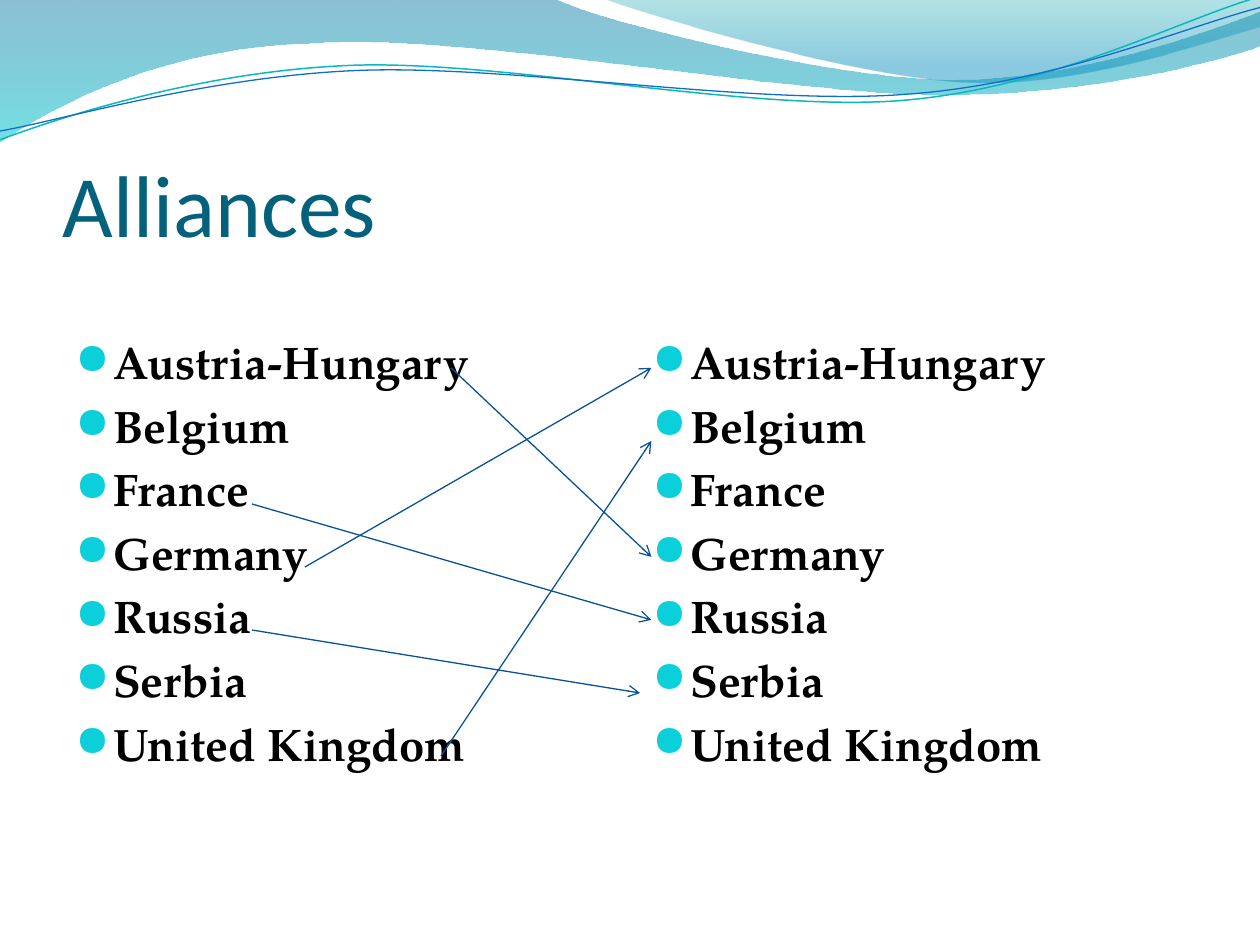
from lxml import etree
from pptx import Presentation
from pptx.dml.color import RGBColor
from pptx.enum import shapes, text
from pptx.oxml import ns
from pptx.util import Inches, Pt

COLORS = {
    "title": "04617B", "body": "000000", "bullet": "0BD0D9", "arrow": "095295",
    "teal_line": "0AB8BF", "blue_line": "0F6FC6",
    "deep_blue": "0074A1", "aqua": "00C6CF", "green": "00A1A9", "sky": "008BBF",
}
COUNTRIES = ["Austria-Hungary", "Belgium", "France", "Germany", "Russia",
             "Serbia", "United Kingdom"]
ARROWS = [
    ((2.42, 4.5), (5.17, 2.92)),
    ((2, 5), (5.08, 5.5)),
    ((3.5, 6), (5.17, 3.5)),
    ((2, 4), (5.17, 4.92)),
    ((3.58, 2.92), (5.17, 4.42)),
]
# Waves: two numbers are a straight step, six numbers are a Bezier curve.
WIDE_WAVE = [
    (0, 0), (4.4, -0.01), (4.76, 0.17, 6.64, 0.63, 7.58, 0.63),
    (8.53, 0.63, 9.58, 0.26, 10, 0.09), (10.01, 0.36),
    (9.83, 0.44, 8.7, 0.76, 7.46, 0.75), (6.22, 0.75, 3.82, 0.28, 2.57, 0.34),
    (1.29, 0.36, 0.46, 0.83, -0.01, 1.13), (0, 0),
]
RIGHT_WAVE = [
    (4.79, -0.01), (5.09, 0.11, 6.82, 0.62, 7.69, 0.65),
    (8.56, 0.69, 9.61, 0.32, 10, 0.21), (10, 0), (4.79, -0.01),
]
TEAL_CURVE = [
    (0, 1.11), (0.48, 0.93, 1.58, 0.57, 2.77, 0.52),
    (3.95, 0.47, 5.93, 0.89, 7.13, 0.8), (8.33, 0.71, 9.38, 0.15, 9.98, -0.02),
]
BLUE_CURVE = [
    (0, 1.04), (0.47, 0.96, 1.64, 0.61, 2.83, 0.56),
    (4.03, 0.51, 5.97, 0.84, 7.17, 0.75), (8.36, 0.67, 9.41, 0.21, 10, 0.06),
]


def rgb(name):
    return RGBColor.from_string(COLORS[name])


def add_xml(parent, tag, **attrs):
    return etree.SubElement(parent, ns.qn(tag), attrs)


def add_outline(s, steps, close):
    """Add a freeform through the step ends, then bend its curved steps."""
    ends = [(Inches(step[-2]), Inches(step[-1])) for step in steps]
    builder = s.shapes.build_freeform(*ends[0])
    builder.add_line_segments(ends[1:], close=close)
    sp = builder.convert_to_shape()
    sp.shadow.inherit = False
    segments = list(sp._element.iter(ns.qn("a:lnTo")))
    for segment, step in zip(segments, steps[1:]):
        if len(step) == 6:
            curve = etree.Element(ns.qn("a:cubicBezTo"))
            for x, y in zip(step[::2], step[1::2]):
                add_xml(curve, "a:pt", x=str(Inches(x) - sp.left),
                        y=str(Inches(y) - sp.top))
            segment.getparent().replace(segment, curve)
    return sp


def add_wave(s, steps, stops):
    """Add a filled wave; stops are (position, colour name, opacity in percent)."""
    sp = add_outline(s, steps, close=True)
    sp.line.fill.background()
    sp.fill.gradient()
    sp.fill.gradient_angle = 270
    for stop, (position, name, _) in zip(sp.fill.gradient_stops, stops):
        stop.position = position
        stop.color.rgb = rgb(name)
    colors = sp._element.spPr.iter(ns.qn("a:srgbClr"))
    for color, (_, _, opacity) in zip(list(colors), stops):
        add_xml(color, "a:alpha", val=str(opacity * 1000))


def add_curve(s, steps, color, width):
    sp = add_outline(s, steps, close=False)
    sp.fill.background()
    sp.line.color.rgb = rgb(color)
    sp.line.width = Pt(width)


def add_bullet(p):
    pPr = p._p.get_or_add_pPr()
    pPr.set("marL", str(Inches(0.3)))
    pPr.set("indent", str(-Inches(0.3)))
    add_xml(add_xml(pPr, "a:buClr"), "a:srgbClr", val=COLORS["bullet"])
    add_xml(pPr, "a:buSzPct", val="95000")
    add_xml(pPr, "a:buFont", typeface="OpenSymbol")
    add_xml(pPr, "a:buChar", char="●")


def add_text(s, lines, box, size, font, color, bold=False, bullets=False, before=0,
             anchor=text.MSO_ANCHOR.TOP, insets=(0.1, 0.05, 0.1, 0.05)):
    tf = s.shapes.add_textbox(*map(Inches, box)).text_frame
    tf.word_wrap = True
    tf.vertical_anchor = anchor
    tf.margin_left, tf.margin_top, tf.margin_right, tf.margin_bottom = map(Inches, insets)
    for i, line in enumerate(lines):
        p = tf.add_paragraph() if i else tf.paragraphs[0]
        p.space_before = Pt(before)
        if bullets:
            add_bullet(p)
        r = p.add_run()
        r.text = line
        r.font.size, r.font.name, r.font.bold = Pt(size), font, bold
        r.font.color.rgb = rgb(color)


def add_arrow(s, start, end):
    line = s.shapes.add_connector(shapes.MSO_CONNECTOR.STRAIGHT,
                                  *map(Inches, start + end))
    line.line.color.rgb = rgb("arrow")
    line.line.width = Pt(0.75)
    add_xml(line.line._get_or_add_ln(), "a:tailEnd", type="arrow")
    add_xml(line._element.spPr, "a:effectLst")


def main():
    prs = Presentation()
    prs.slide_width, prs.slide_height = Inches(10), Inches(7.5)
    s = prs.slides.add_slide(prs.slide_layouts[6])

    add_wave(s, WIDE_WAVE, [(0, "deep_blue", 45), (1, "aqua", 55)])
    add_wave(s, RIGHT_WAVE, [(0, "green", 30), (0.8, "sky", 45)])
    add_curve(s, TEAL_CURVE, "teal_line", 0.85)
    add_curve(s, BLUE_CURVE, "blue_line", 0.75)

    add_text(s, ["Alliances"], (0.5, 0.77, 9, 1.25), 50, "Calibri", "title",
             anchor=text.MSO_ANCHOR.BOTTOM, insets=(0, 0.05, 0, 0))
    for left in (0.5, 5.08):
        add_text(s, COUNTRIES, (left, 2.1, 4.42, 4.85), 26, "TeX Gyre Pagella", "body",
                 bold=True, bullets=True, before=5.2, insets=(0.1, 0.55, 0.1, 0.05))
    for start, end in ARROWS:
        add_arrow(s, start, end)

    prs.save("out.pptx")


if __name__ == "__main__":
    main()
